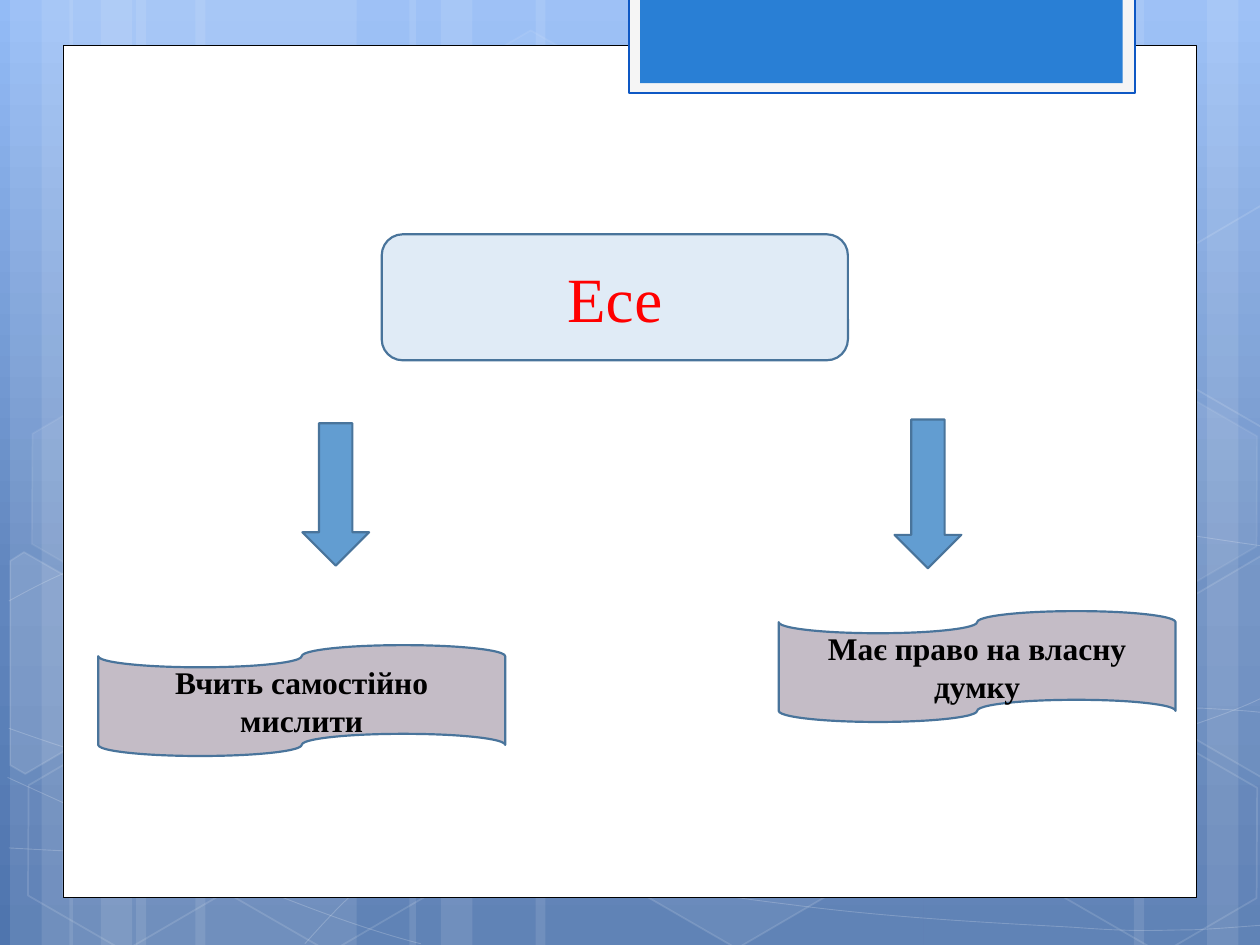
import copy
import math

import pptx
import pptx.dml.color
import pptx.enum.shapes
import pptx.enum.text
import pptx.oxml
import pptx.oxml.ns
import pptx.util

Inches = pptx.util.Inches
Pt = pptx.util.Pt
qn = pptx.oxml.ns.qn
SHAPE = pptx.enum.shapes.MSO_SHAPE
NAMESPACE = pptx.oxml.ns.nsdecls("a")
TILT = 30


def colour(hex_text):
    return pptx.dml.color.RGBColor.from_string(hex_text)


def set_opacity(fill, percent):
    """Add an alpha value to a solid fill that already has its colour."""
    if percent < 100:
        rgb = fill._xPr.find(qn("a:solidFill"))[0]
        rgb.append(pptx.oxml.parse_xml(f'<a:alpha {NAMESPACE} val="{percent * 1000}"/>'))


def turn_back(points, centre):
    """Undo the tilt of points about a centre, so that the shape itself can carry it."""
    cos, sin = math.cos(math.radians(TILT)), math.sin(math.radians(TILT))
    cx, cy = centre
    return [(cx + (x - cx) * cos + (y - cy) * sin, cy - (x - cx) * sin + (y - cy) * cos)
            for x, y in points]


class SlideBuilder:
    font = "Times New Roman"
    outline = "49749B"
    outline_width = 1.25

    def __init__(self, slide):
        self.slide = slide

    def gradient_background(self, stops, angle):
        fill = self.slide.background.fill
        fill.gradient()
        fill.gradient_angle = angle
        stop_list = self.slide.element.find(".//" + qn("a:gsLst"))
        while len(stop_list) < len(stops):
            stop_list.append(copy.deepcopy(stop_list[-1]))
        for stop, (position, hex_text) in zip(fill.gradient_stops, stops):
            stop.position = position
            stop.color.rgb = colour(hex_text)

    def paint(self, shape, fill=None, opacity=100, line=None, width=1, line_opacity=100):
        shape.shadow.inherit = False
        if fill:
            shape.fill.solid()
            shape.fill.fore_color.rgb = colour(fill)
            set_opacity(shape.fill, opacity)
        else:
            shape.fill.background()
        if line:
            shape.line.color.rgb = colour(line)
            shape.line.width = Pt(width)
            set_opacity(shape.line.fill, line_opacity)
        else:
            shape.line.fill.background()

    def shape(self, kind, box, **style):
        shape = self.slide.shapes.add_shape(kind, *map(Inches, box))
        self.paint(shape, **style)
        return shape

    def outlined(self, kind, box, fill):
        return self.shape(kind, box, fill=fill, line=self.outline, width=self.outline_width)

    def labelled(self, kind, box, fill, text, size, text_colour, bold=False):
        frame = self.outlined(kind, box, fill).text_frame
        frame.word_wrap = True
        frame.vertical_anchor = pptx.enum.text.MSO_ANCHOR.MIDDLE
        paragraph = frame.paragraphs[0]
        paragraph.text = text
        paragraph.alignment = pptx.enum.text.PP_ALIGN.CENTER
        paragraph.font.name = self.font
        paragraph.font.size = Pt(size)
        paragraph.font.bold = bold
        paragraph.font.color.rgb = colour(text_colour)

    def hexagon(self, left, top, opacity, line_opacity):
        hexagon = self.shape(SHAPE.HEXAGON, (left, top, 1.75, 1.52),
                             fill="FFFFFF" if opacity else None, opacity=opacity,
                             line="FFFFFF", line_opacity=line_opacity)
        hexagon.adjustments[0] = 0.285
        hexagon.rotation = TILT

    def freeform(self, points, close, **style):
        vertices = [(Inches(x), Inches(y)) for x, y in points]
        builder = self.slide.shapes.build_freeform(*vertices[0])
        builder.add_line_segments(vertices[1:], close=close)
        freeform = builder.convert_to_shape()
        self.paint(freeform, line="FFFFFF", **style)
        return freeform

    def cut_hexagon(self, points, centre, **style):
        self.freeform(turn_back(points, centre), True, line_opacity=12, **style).rotation = TILT

    def curve(self, points):
        """Draw cubic curves: a start, then two controls and an end for each."""
        freeform = self.freeform(points, False, width=0.5, line_opacity=20)
        lines = list(freeform._element.iter(qn("a:lnTo")))
        for i in range(0, len(lines), 3):
            cubic = pptx.oxml.parse_xml(f"<a:cubicBezTo {NAMESPACE}/>")
            lines[i].addprevious(cubic)
            for line in lines[i:i + 3]:
                cubic.append(line[0])
                line.getparent().remove(line)


STRIPES = [(1.08, 1.75), (0.08, 0.5), (0.33, 0.83), (1.55, 1.75), (0.55, 0.5), (0.8, 0.83),
           (7.33, 1.75), (9.58, 0.5), (9, 0.83), (4.25, 3.08), (3.25, 0.5), (3.5, 0.83)]

CURVES = [
    [(0.07, 6.73), (0.61, 6.76), (1.15, 6.79), (1.9, 6.78), (2.65, 6.77), (3.58, 6.75),
     (4.58, 6.65), (5.58, 6.55), (7, 6.36), (7.92, 6.17), (8.83, 5.98), (9.77, 5.68),
     (10.07, 5.51)],
    [(0.07, 4.77), (0.36, 4.61), (0.65, 4.46), (1.21, 4.31), (1.78, 4.16), (2.59, 3.94),
     (3.47, 3.87), (4.36, 3.8), (5.44, 3.79), (6.54, 3.87), (7.64, 3.95), (9.47, 4.26),
     (10.07, 4.34)],
    [(0.06, 6.17), (1.27, 6.72), (2.47, 7.27), (3.34, 7.49)],
    [(0.07, 5.78), (0.38, 5.89), (0.7, 6), (1.28, 6.16), (1.86, 6.31), (2.73, 6.56),
     (3.57, 6.73), (4.4, 6.9), (5.45, 7.08), (6.28, 7.18), (7.11, 7.29), (8, 7.33),
     (8.53, 7.36), (9.05, 7.4), (9.19, 7.38), (9.45, 7.38), (9.71, 7.37), (9.89, 7.35),
     (10.07, 7.34)],
    [(2.42, 7.49), (2.6, 7.29), (2.78, 7.09), (3.02, 6.91), (3.26, 6.73), (3.6, 6.53),
     (3.88, 6.39), (4.16, 6.25), (4.33, 6.19), (4.7, 6.09), (5.06, 5.99), (5.73, 5.85),
     (6.08, 5.78), (6.44, 5.71), (6.49, 5.71), (6.8, 5.69), (7.11, 5.66), (7.6, 5.63),
     (7.94, 5.62), (8.29, 5.61), (8.86, 5.62), (8.86, 5.62), (9.08, 5.62), (9.31, 5.62),
     (9.53, 5.62), (9.71, 5.63), (9.88, 5.64), (9.97, 5.65), (10.06, 5.66), (10.03, 5.65),
     (10.06, 5.66)],
]

# left, top, fill opacity, line opacity
HEXAGONS = [(3.34, 0.36, 4, 8), (4.97, 5.89, 6, 12), (0.11, 5.91, 0, 12),
            (0.14, 3.12, 7, 8), (1.74, 5.92, 0, 12), (7.53, 4.53, 10, 12),
            (8.34, 5.93, 0, 12), (8.34, 3.14, 7, 8)]

LEFT_CUT_HEXAGON = [(0.08, 4.45), (0.19, 4.38), (0.96, 4.82), (0.95, 5.7), (0.2, 6.14),
                    (0.08, 6.07)]
RIGHT_CUT_HEXAGON = [(9.26, 4.85), (10.01, 4.41), (10.09, 4.46), (10.09, 6.13),
                     (10.02, 6.17), (9.26, 5.73)]
RISE = 2.78


def main():
    presentation = pptx.Presentation()
    presentation.slide_width = Inches(10)
    presentation.slide_height = Inches(7.5)
    builder = SlideBuilder(presentation.slides.add_slide(presentation.slide_layouts[6]))

    builder.gradient_background([(0, "93BBF6"), (0.62, "6186BE"), (1, "4F75AE")], 270)
    for left, width in STRIPES:
        builder.shape(SHAPE.RECTANGLE, (left, 0, width, 7.5), fill="FFFFFF", opacity=10)
    for curve in CURVES:
        builder.curve(curve)
    for hexagon in HEXAGONS[:2]:
        builder.hexagon(*hexagon)
    builder.cut_hexagon(LEFT_CUT_HEXAGON, (0.36, 5.35), fill="FFFFFF", opacity=10)
    for hexagon in HEXAGONS[2:]:
        builder.hexagon(*hexagon)
    builder.cut_hexagon(RIGHT_CUT_HEXAGON, (9.85, 5.2), fill="FFFFFF", opacity=4)
    builder.cut_hexagon([(x, y - RISE) for x, y in RIGHT_CUT_HEXAGON], (9.85, 5.2 - RISE))

    builder.shape(SHAPE.RECTANGLE, (0.5, 0.36, 9, 6.76), fill="FFFFFF", line="000000", width=0.5)
    builder.shape(SHAPE.RECTANGLE, (4.99, -0.02, 4.02, 0.76), fill="F5F5F5",
                  line="0E58C4", width=1.25)
    builder.shape(SHAPE.RECTANGLE, (5.08, -0.02, 3.83, 0.68), fill="297FD5")

    builder.labelled(SHAPE.ROUNDED_RECTANGLE, (3.03, 1.86, 3.7, 1), "E0EBF6",
                     "Есе", 36, "FF0000")
    for arrow in [(2.4, 3.36, 0.53, 1.13), (7.1, 3.33, 0.53, 1.18)]:
        builder.outlined(SHAPE.DOWN_ARROW, arrow, "629DD1")
    for box, trait in [((0.78, 5.12, 3.23, 0.88), "Вчить самостійно мислити"),
                       ((6.18, 4.85, 3.15, 0.88), "Має право на власну думку")]:
        builder.labelled(SHAPE.FLOWCHART_PUNCHED_TAPE, box, "C4BCC6",
                         trait, 18, "000000", bold=True)

    presentation.save("out.pptx")


if __name__ == "__main__":
    main()
